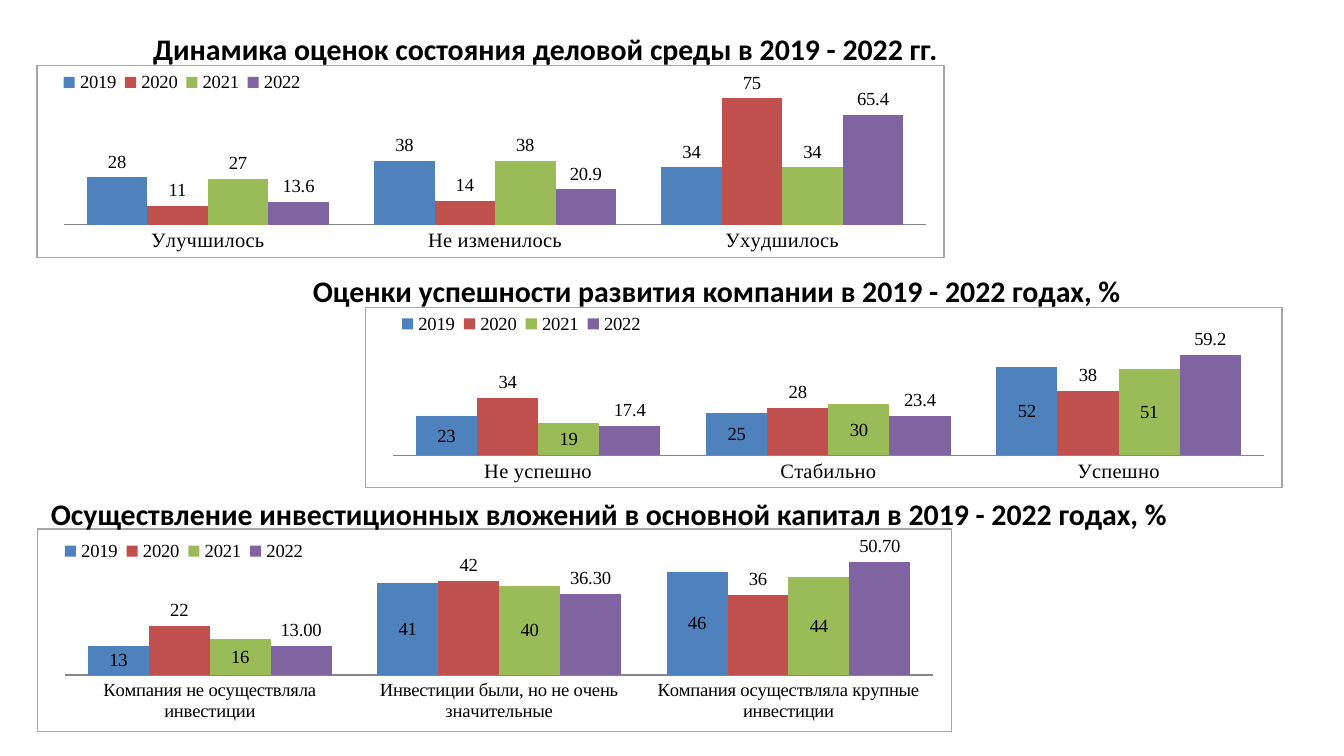
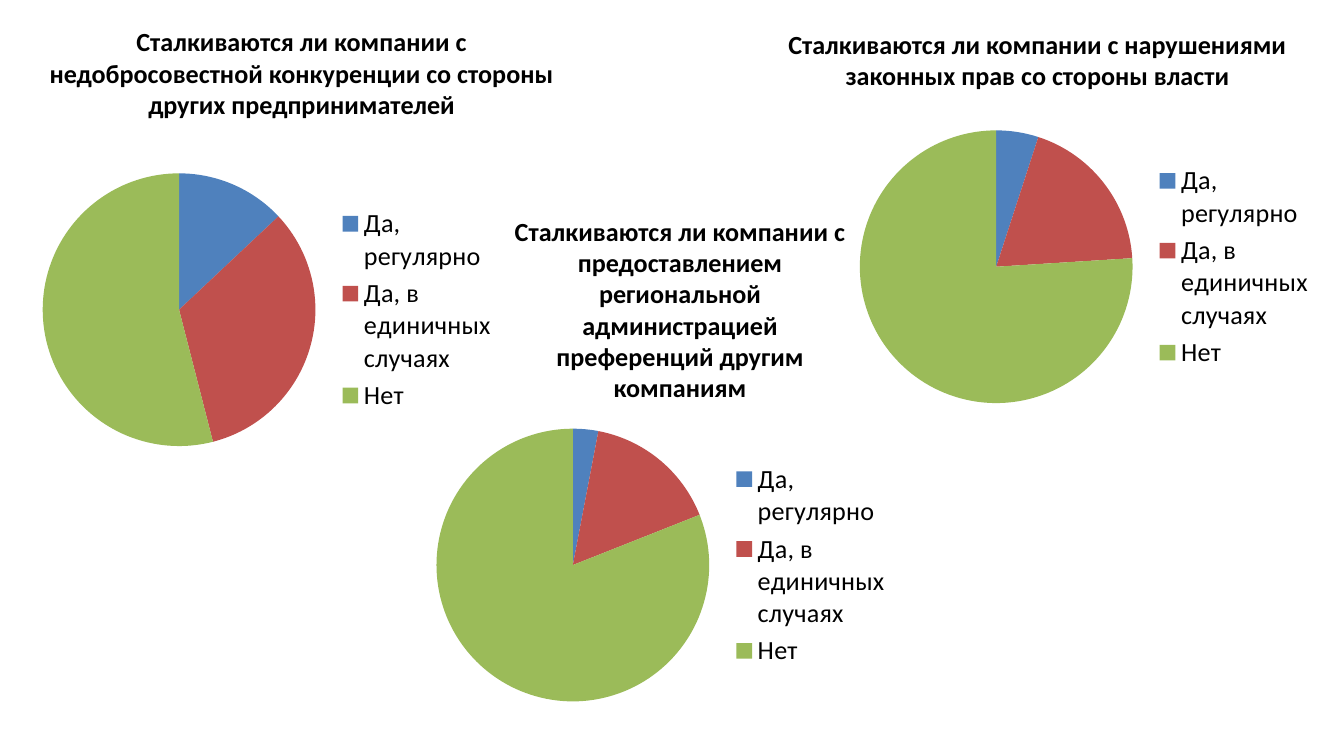
"""Build two slides of business climate survey charts."""
from pptx import Presentation
from pptx.chart.data import CategoryChartData
from pptx.dml.color import RGBColor
from pptx.enum.chart import XL_CHART_TYPE, XL_LABEL_POSITION, XL_LEGEND_POSITION, XL_TICK_MARK
from pptx.enum.text import MSO_ANCHOR, MSO_AUTO_SIZE, PP_ALIGN
from pptx.oxml import parse_xml
from pptx.oxml.ns import nsdecls, qn
from pptx.util import Pt

PX = 4572
BLACK = RGBColor(0x00, 0x00, 0x00)
BORDER_GRAY = RGBColor(0xA6, 0xA6, 0xA6)
AXIS_GRAY = RGBColor(0x86, 0x86, 0x86)
BLUE = RGBColor(0x4F, 0x81, 0xBD)
RED = RGBColor(0xC0, 0x50, 0x4D)
GREEN = RGBColor(0x9B, 0xBB, 0x59)
PURPLE = RGBColor(0x80, 0x64, 0xA2)
COLORS = (BLUE, RED, GREEN, PURPLE)
YEARS = ("2019", "2020", "2021", "2022")
ANSWERS = ("Да, регулярно", "Да, в единичных случаях", "Нет")
OUTSIDE, CENTER = XL_LABEL_POSITION.OUTSIDE_END, XL_LABEL_POSITION.CENTER
MIXED = (CENTER, OUTSIDE, CENTER, OUTSIDE)

COLUMN_CHARTS = (
    dict(heading="Динамика оценок состояния деловой среды в 2019 - 2022 гг.",
         heading_area=(56, 36, 1512, 74), align=PP_ALIGN.CENTER,
         area=(54, 96, 1352, 288), plot=(0.03, 0.13, 0.95, 0.7), legend=(0.02, 0.03, 0.28, 0.12),
         categories=("Улучшилось", "Не изменилось", "Ухудшилось"),
         values=((28, 38, 34), (11, 14, 75), (27, 38, 34), (13.6, 20.9, 65.4)),
         positions=(OUTSIDE,) * 4, maximum=80, axis_size=11, last_format="General"),
    dict(heading="Оценки успешности развития компании в 2019 - 2022 годах, %",
         heading_area=(446, 396, 1434, 74), align=PP_ALIGN.LEFT,
         area=(543, 457, 1366, 270), plot=(0.03, 0.16, 0.95, 0.66), legend=(0.03, 0.03, 0.28, 0.12),
         categories=("Не успешно", "Стабильно", "Успешно"),
         values=((23, 25, 52), (34, 28, 38), (19, 30, 51), (17.4, 23.4, 59.2)),
         positions=MIXED, maximum=70, axis_size=11, last_format="General"),
    dict(heading="Осуществление инвестиционных вложений в основной капитал в 2019 - 2022 годах, %",
         heading_area=(56, 728, 1922, 74), align=PP_ALIGN.LEFT,
         area=(55, 786, 1362, 304), plot=(0.03, 0.06, 0.95, 0.66), legend=(0.02, 0.05, 0.28, 0.12),
         categories=("Компания не осуществляла инвестиции",
                     "Инвестиции были, но не очень значительные",
                     "Компания осуществляла крупные инвестиции"),
         values=((13, 41, 46), (22, 42, 36), (16, 40, 44), (13, 36.3, 50.7)),
         positions=MIXED, maximum=60, axis_size=10, last_format="0.00"),
)

PIE_CHARTS = (
    ("Сталкиваются ли компании с недобросовестной конкуренции со стороны других предпринимателей",
     (24, 28, 850, 162), (36, 152), (13, 33, 54)),
    ("Сталкиваются ли компании с нарушениями законных прав со стороны власти",
     (1142, 32, 804, 114), (1252, 88), (5, 19, 76)),
    ("Сталкиваются ли компании с предоставлением региональной администрацией "
     "преференций другим компаниям",
     (744, 310, 536, 302), (622, 532), (3, 16, 81)),
)
PIE_SIZE = (724, 618)


def apply_format(target, values):
    """Set each named attribute of the target."""
    for name, value in values.items():
        setattr(target, name, value)


def set_layout(parent, position, area, inner=False):
    """Give a chart part a manual layout in fractions of the chart."""
    for layout in parent.findall(qn("c:layout")):
        parent.remove(layout)
    target = '<c:layoutTarget val="inner"/>' if inner else ""
    modes = "".join(f'<c:{side}Mode val="edge"/>' for side in "xy")
    sizes = "".join(f'<c:{side} val="{value}"/>' for side, value in zip("xywh", area))
    parent.insert(position, parse_xml(
        f'<c:layout {nsdecls("c")}><c:manualLayout>{target}{modes}{sizes}'
        "</c:manualLayout></c:layout>"))


class SlideBuilder:
    """Holds the shared style and the current slide."""

    def __init__(self, deck):
        """Keep the deck that receives the slides."""
        self.deck = deck
        self.page = None
        self.title_free = False

    def new_page(self):
        """Start a slide that has a title only."""
        self.page = self.deck.slides.add_slide(self.deck.slide_layouts[5])
        self.title_free = True

    def heading(self, text, area, size, align=PP_ALIGN.CENTER):
        """Write a bold heading, the first one in the title placeholder."""
        left, top, width, height = (value * PX for value in area)
        if self.title_free:
            box = self.page.shapes.title
            apply_format(box, dict(left=left, top=top, width=width, height=height))
            self.title_free = False
        else:
            box = self.page.shapes.add_textbox(left, top, width, height)
        apply_format(box.text_frame, dict(word_wrap=True, vertical_anchor=MSO_ANCHOR.TOP,
                                          auto_size=MSO_AUTO_SIZE.SHAPE_TO_FIT_TEXT))
        para = box.text_frame.paragraphs[0]
        para.alignment = align
        span = para.add_run()
        span.text = text
        apply_format(span.font, dict(name="Calibri", size=Pt(size), bold=True))
        span.font.color.rgb = BLACK

    def chart(self, kind, area, data, font, size, legend_position, legend_size, border=""):
        """Add a chart with its font, legend and frame."""
        chart = self.page.shapes.add_chart(kind, *(value * PX for value in area), data).chart
        apply_format(chart, dict(has_title=False, has_legend=True))
        apply_format(chart.font, dict(name=font, size=Pt(size)))
        chart.font.color.rgb = BLACK
        apply_format(chart.legend, dict(position=legend_position, include_in_layout=False))
        apply_format(chart.legend.font, dict(name=font, size=Pt(legend_size)))
        chart.legend.font.color.rgb = BLACK
        line = f'<a:solidFill><a:srgbClr val="{border}"/></a:solidFill>' if border else "<a:noFill/>"
        chart.element.find(qn("c:chart")).addnext(parse_xml(
            f'<c:spPr {nsdecls("c", "a")}><a:noFill/><a:ln w="9525">{line}</a:ln></c:spPr>'))
        return chart

    def column_chart(self, item):
        """Add a clustered column chart with value labels."""
        data = CategoryChartData()
        data.categories = item["categories"]
        for year, values in zip(YEARS, item["values"]):
            data.add_series(year, values)
        chart = self.chart(XL_CHART_TYPE.COLUMN_CLUSTERED, item["area"], data,
                           "Times New Roman", 10, XL_LEGEND_POSITION.TOP, 10, BORDER_GRAY)
        apply_format(chart.value_axis, dict(visible=False, has_major_gridlines=False,
                                            minimum_scale=0, maximum_scale=item["maximum"]))
        axis = chart.category_axis
        apply_format(axis, dict(major_tick_mark=XL_TICK_MARK.NONE, has_major_gridlines=False))
        axis.format.line.color.rgb = AXIS_GRAY
        axis.tick_labels.font.size = Pt(item["axis_size"])
        plot = chart.plots[0]
        apply_format(plot, dict(gap_width=75, overlap=0, vary_by_categories=False))
        formats = ("#,##0",) * 3 + (item["last_format"],)
        for series, color, position, number_format in zip(
                plot.series, COLORS, item["positions"], formats):
            series.format.fill.solid()
            series.format.fill.fore_color.rgb = color
            apply_format(series.data_labels, dict(
                show_value=True, position=position, number_format=number_format,
                number_format_is_linked=False))
        root = chart.element
        set_layout(root.find(".//" + qn("c:plotArea")), 0, item["plot"], inner=True)
        set_layout(root.find(".//" + qn("c:legend")), 1, item["legend"])

    def pie_chart(self, corner, values):
        """Add a pie chart of the three answers."""
        data = CategoryChartData()
        data.categories = ANSWERS
        data.add_series("Series 1", values)
        chart = self.chart(XL_CHART_TYPE.PIE, corner + PIE_SIZE, data,
                           "Calibri", 18, XL_LEGEND_POSITION.RIGHT, 14)
        plot = chart.plots[0]
        plot.vary_by_categories = True
        for index, color in enumerate(COLORS[:len(values)]):
            fill = plot.series[0].points[index].format.fill
            fill.solid()
            fill.fore_color.rgb = color


def main():
    """Build and save the deck."""
    deck = Presentation()
    apply_format(deck, dict(slide_width=2000 * PX, slide_height=1125 * PX))
    builder = SlideBuilder(deck)
    builder.new_page()
    for item in COLUMN_CHARTS:
        builder.column_chart(item)
        builder.heading(item["heading"], item["heading_area"], 16, item["align"])
    builder.new_page()
    for text, area, corner, values in PIE_CHARTS:
        builder.pie_chart(corner, values)
        builder.heading(text, area, 14)
    deck.save("out.pptx")


if __name__ == "__main__":
    main()
